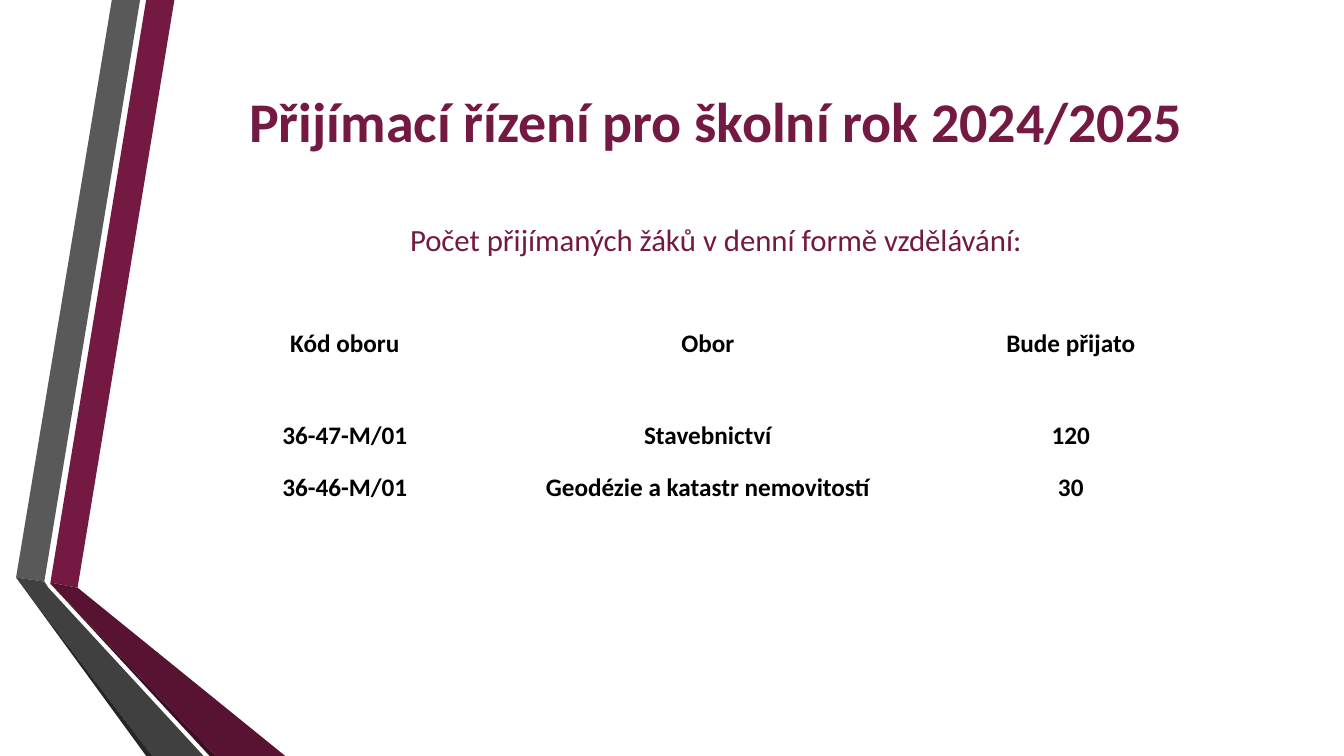
from dataclasses import dataclass

import pptx
import pptx.dml.color
import pptx.enum.text
import pptx.oxml.ns
import pptx.util

Inches = pptx.util.Inches
Pt = pptx.util.Pt
RGBColor = pptx.dml.color.RGBColor

FONT = "Calibri"
PLUM = RGBColor(0x74, 0x19, 0x42)
PLUM_DARK = RGBColor(0x57, 0x13, 0x31)
PLUM_DEEP = RGBColor(0x3A, 0x0D, 0x21)
GRAY = RGBColor(0x59, 0x59, 0x59)
GRAY_DARK = RGBColor(0x40, 0x40, 0x40)
GRAY_DEEP = RGBColor(0x26, 0x26, 0x26)
BLACK = RGBColor(0, 0, 0)


@dataclass
class Band:
    points: list[tuple[float, float]]
    color: RGBColor


@dataclass
class Line:
    text: str
    size: int
    bold: bool
    space_before: int


BANDS = [
    Band([(0.5, 5.78), (0.77, 5.83), (1.73, 0), (1.45, 0)], PLUM),
    Band([(1.39, 0), (1.11, 0), (0.16, 5.73), (0.44, 5.77)], GRAY),
    Band([(0.5, 5.78), (0.5, 5.79), (2.14, 7.5), (2.83, 7.5), (0.77, 5.83)], PLUM_DARK),
    Band([(2.02, 7.5), (0.48, 5.83), (0.44, 5.77), (0.16, 5.73), (1.51, 7.5)], GRAY_DARK),
    Band([(0.16, 5.73), (1.45, 7.5), (1.51, 7.5)], GRAY_DEEP),
    Band([(0.5, 5.79), (2.08, 7.5), (2.14, 7.5)], PLUM_DEEP),
]

HEADING = [
    Line("Přijímací řízení pro školní rok 2024/2025", 40, True, 0),
    Line("Počet přijímaných žáků v denní formě vzdělávání:", 22, False, 48),
]

ROWS = [
    ("Kód oboru", "Obor", "Bude přijato"),
    ("36-47-M/01", "Stavebnictví", "120"),
    ("36-46-M/01", "Geodézie a katastr nemovitostí", "30"),
]
ROW_HEIGHTS = [1.3, 0.52, 0.53]
COLUMN_WIDTH = 3.6


def format_paragraph(p, size: int, bold: bool, color: RGBColor) -> None:
    p.alignment = pptx.enum.text.PP_ALIGN.CENTER
    for r in p.runs:
        r.font.name = FONT
        r.font.size = Pt(size)
        r.font.bold = bold
        r.font.color.rgb = color


def add_band(s, band: Band) -> None:
    points = [(Inches(x), Inches(y)) for x, y in band.points]
    builder = s.shapes.build_freeform(*points[0])
    builder.add_line_segments(points[1:], close=True)
    sp = builder.convert_to_shape()
    sp.shadow.inherit = False
    sp.fill.solid()
    sp.fill.fore_color.rgb = band.color
    sp.line.fill.background()


def add_heading(s, lines: list[Line]) -> None:
    sp = s.shapes.add_textbox(Inches(1.62), Inches(0.75), Inches(10.96), Inches(1.92))
    tf = sp.text_frame
    tf.word_wrap = True
    tf.vertical_anchor = pptx.enum.text.MSO_ANCHOR.MIDDLE
    tf.text = "\n".join(line.text for line in lines)
    for p, line in zip(tf.paragraphs, lines):
        p.space_before = Pt(line.space_before)
        format_paragraph(p, line.size, line.bold, PLUM)


def add_admissions_table(s, rows: list[tuple[str, ...]]) -> None:
    columns = len(rows[0])
    frame = s.shapes.add_table(len(rows), columns, Inches(1.62), Inches(2.76),
                               Inches(columns * COLUMN_WIDTH), Inches(sum(ROW_HEIGHTS)))
    table = frame.table
    table.first_row = False
    table.horz_banding = False
    table_style = table._tbl.tblPr.find(pptx.oxml.ns.qn("a:tableStyleId"))
    table_style.text = "{2D5ABB26-0587-4C30-8999-92F81FD0307C}"
    for column in table.columns:
        column.width = Inches(COLUMN_WIDTH)
    for row, height, texts in zip(table.rows, ROW_HEIGHTS, rows):
        row.height = Inches(height)
        for cell, text in zip(row.cells, texts):
            cell.fill.background()
            cell.vertical_anchor = pptx.enum.text.MSO_ANCHOR.MIDDLE
            cell.text_frame.text = text
            format_paragraph(cell.text_frame.paragraphs[0], 18, True, BLACK)


def main() -> None:
    prs = pptx.Presentation()
    prs.slide_width = Inches(13.33)
    prs.slide_height = Inches(7.5)
    s = prs.slides.add_slide(prs.slide_layouts[6])
    for band in BANDS:
        add_band(s, band)
    add_heading(s, HEADING)
    add_admissions_table(s, ROWS)
    prs.save("out.pptx")


if __name__ == "__main__":
    main()
